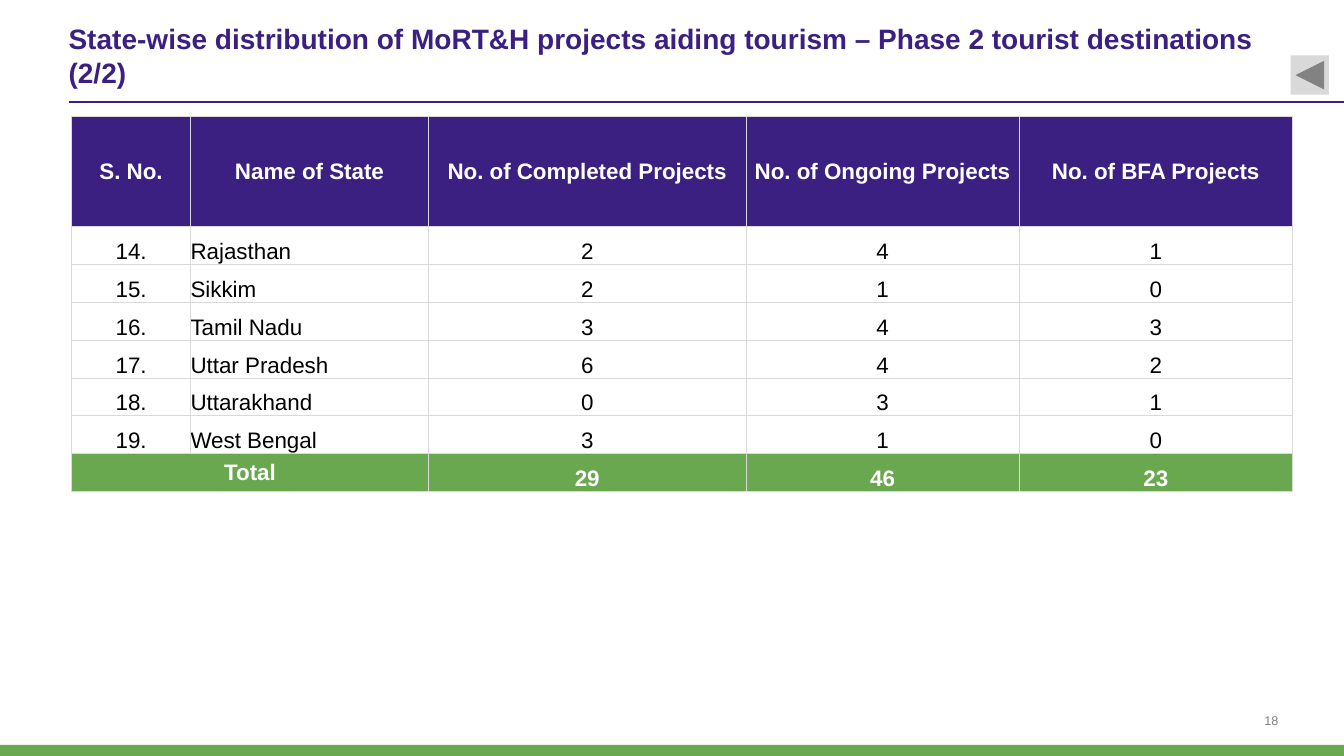
from lxml import etree
from pptx import Presentation
from pptx import util as u
from pptx.dml.color import RGBColor
from pptx.enum import shapes, text
from pptx.oxml.ns import qn

WIDTH, HEIGHT = u.Inches(13.33), u.Inches(7.5)
PURPLE, GREEN, GREY, WHITE, BLACK = "3B2082", "6AA84F", "D9D9D9", "FFFFFF", "000000"
CENTER, LEFT, RIGHT = text.PP_ALIGN.CENTER, text.PP_ALIGN.LEFT, text.PP_ALIGN.RIGHT
MIDDLE, BOTTOM = text.MSO_ANCHOR.MIDDLE, text.MSO_ANCHOR.BOTTOM

COLUMN_SHARES = [8.85, 17.7, 23.63, 20.33, 20.33]
HEADER_SHARE, ROW_SHARE = 14.67, 5
HEADINGS = ["S. No.", "Name of State", "No. of Completed Projects",
            "No. of Ongoing Projects", "No. of BFA Projects"]
STATES = [
    ("Rajasthan", 2, 4, 1),
    ("Sikkim", 2, 1, 0),
    ("Tamil Nadu", 3, 4, 3),
    ("Uttar Pradesh", 6, 4, 2),
    ("Uttarakhand", 0, 3, 1),
    ("West Bengal", 3, 1, 0),
]
FIRST_NUMBER = 14
TOTALS = ["Total", "", 29, 46, 23]


def color(value):
    return RGBColor.from_string(value)


def across(share):
    return u.Emu(round(WIDTH * share / 100))


def down(share):
    return u.Emu(round(HEIGHT * share / 100))


def area(left, top, width, height):
    return across(left), down(top), across(width), down(height)


def assign(target, values):
    for key, value in values.items():
        setattr(target, key, value)


def write(frame, wording, size, ink, align, bold=False):
    frame.text = str(wording)
    paragraph = frame.paragraphs[0]
    paragraph.alignment = align
    font = paragraph.runs[0].font
    assign(font, {"name": "Arial", "size": u.Pt(size), "bold": bold})
    font.color.rgb = color(ink)


def frame_up(frame, anchor):
    assign(frame, {"margin_left": 0, "margin_right": 0, "margin_top": 0, "margin_bottom": 0,
                   "word_wrap": True, "auto_size": text.MSO_AUTO_SIZE.NONE,
                   "vertical_anchor": anchor})


def add_title(slide, wording):
    title = slide.shapes.title
    assign(title, dict(zip(("left", "top", "width", "height"), area(5.1, 1.6, 90.92, 11.47))))
    frame_up(title.text_frame, MIDDLE)
    write(title.text_frame, wording, 20, PURPLE, LEFT, True)


def add_rule(slide):
    rule = slide.shapes.add_connector(shapes.MSO_CONNECTOR.STRAIGHT, across(5.1), down(13.47),
                                      across(100), down(13.47))
    rule.line.color.rgb = color(PURPLE)
    rule.line.width = u.Pt(1)
    etree.SubElement(rule.element.spPr, qn("a:effectLst"))


def add_block(slide, preset, place, fill, rotation=0):
    block = slide.shapes.add_shape(preset, *place)
    block.shadow.inherit = False
    block.fill.solid()
    block.fill.fore_color.rgb = color(fill)
    block.line.fill.background()
    block.rotation = rotation


def add_page_number(slide, number):
    frame = slide.shapes.add_textbox(*area(86.57, 93.73, 8.55, 2.53)).text_frame
    frame_up(frame, BOTTOM)
    write(frame, number, 9, "808080", RIGHT)


def add_borders(cell):
    properties = cell._tc.get_or_add_tcPr()
    for side in ("a:lnL", "a:lnR", "a:lnT", "a:lnB"):
        border = etree.SubElement(properties, qn(side), w=str(u.Pt(0.5)))
        fill = etree.SubElement(border, qn("a:solidFill"))
        etree.SubElement(fill, qn("a:srgbClr"), val=GREY)


def fill_cell(cell, wording, fill, align, anchor, inset):
    side = u.Inches(inset)
    assign(cell, {"margin_left": side, "margin_right": side, "margin_top": side,
                  "margin_bottom": 0, "vertical_anchor": anchor})
    add_borders(cell)
    if fill:
        cell.fill.solid()
        cell.fill.fore_color.rgb = color(fill)
    else:
        cell.fill.background()
    if wording != "":
        write(cell.text_frame, wording, 16, WHITE if fill else BLACK, align, bool(fill))


def add_state_table(slide):
    numbered = [(f"{number}.", *state) for number, state in enumerate(STATES, FIRST_NUMBER)]
    rows = [HEADINGS, *numbered, TOTALS]
    last = len(rows) - 1
    place = area(5.33, 15.33, sum(COLUMN_SHARES), HEADER_SHARE + ROW_SHARE * last)
    table = slide.shapes.add_table(len(rows), len(HEADINGS), *place).table
    assign(table, {"first_row": False, "horz_banding": False})
    for column, share in zip(table.columns, COLUMN_SHARES):
        column.width = across(share)
    for r, values in enumerate(rows):
        table.rows[r].height = down(ROW_SHARE if r else HEADER_SHARE)
        fill = {0: PURPLE, last: GREEN}.get(r)
        for c, value in enumerate(values):
            align = LEFT if c == 1 and not fill else CENTER
            anchor = MIDDLE if r == 0 or (r == last and c == 0) else BOTTOM
            inset = 0.01 if r == 0 or c == 0 else 0
            fill_cell(table.cell(r, c), value, fill, align, anchor, inset)
    table.cell(last, 0).merge(table.cell(last, 1))


def main():
    deck = Presentation()
    assign(deck, {"slide_width": WIDTH, "slide_height": HEIGHT})
    slide = deck.slides.add_slide(deck.slide_layouts[5])
    add_rule(slide)
    add_page_number(slide, 18)
    add_block(slide, shapes.MSO_SHAPE.RECTANGLE, area(0, 98.53, 100, 1.47), GREEN)
    add_title(slide, "State-wise distribution of MoRT&H projects aiding tourism – "
                     "Phase 2 tourist destinations (2/2)")
    add_state_table(slide)
    add_block(slide, shapes.MSO_SHAPE.ACTION_BUTTON_FORWARD_OR_NEXT,
              area(96.02, 7.33, 2.85, 5.2), GREY, 180)
    deck.save("out.pptx")


if __name__ == "__main__":
    main()
